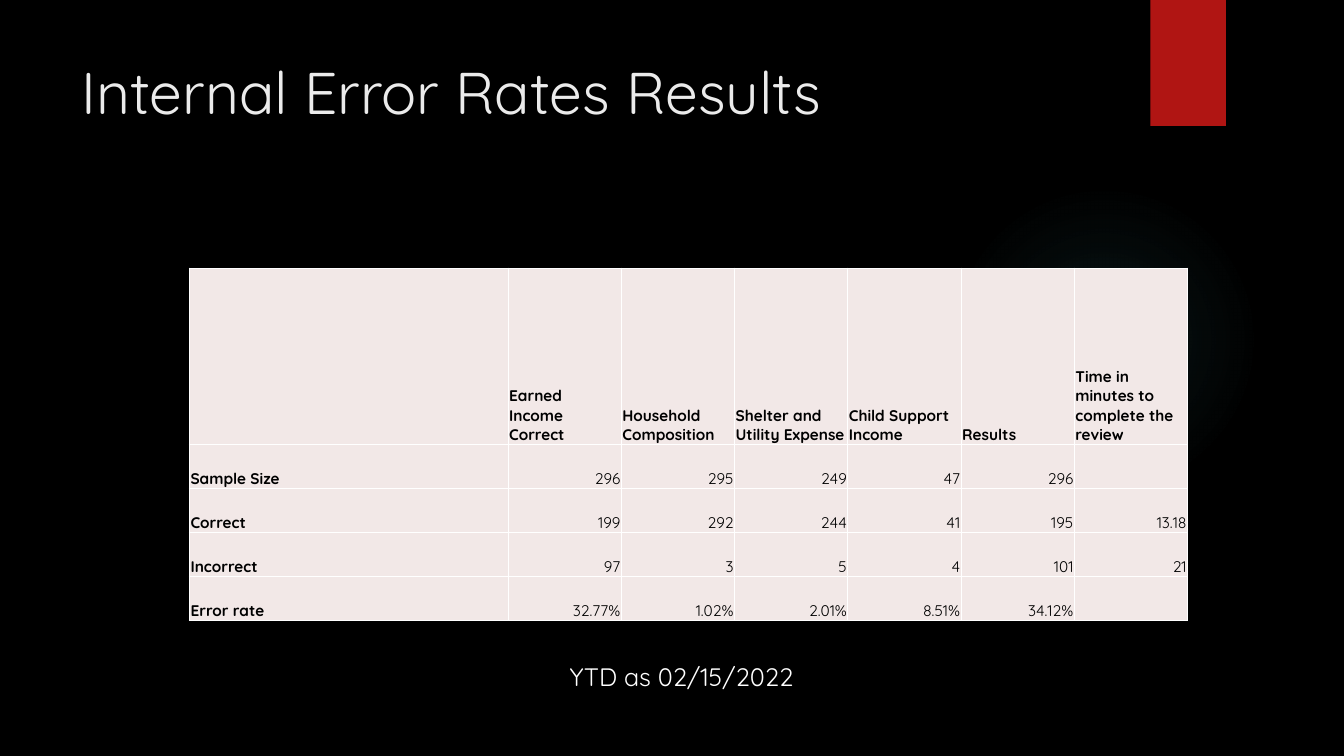
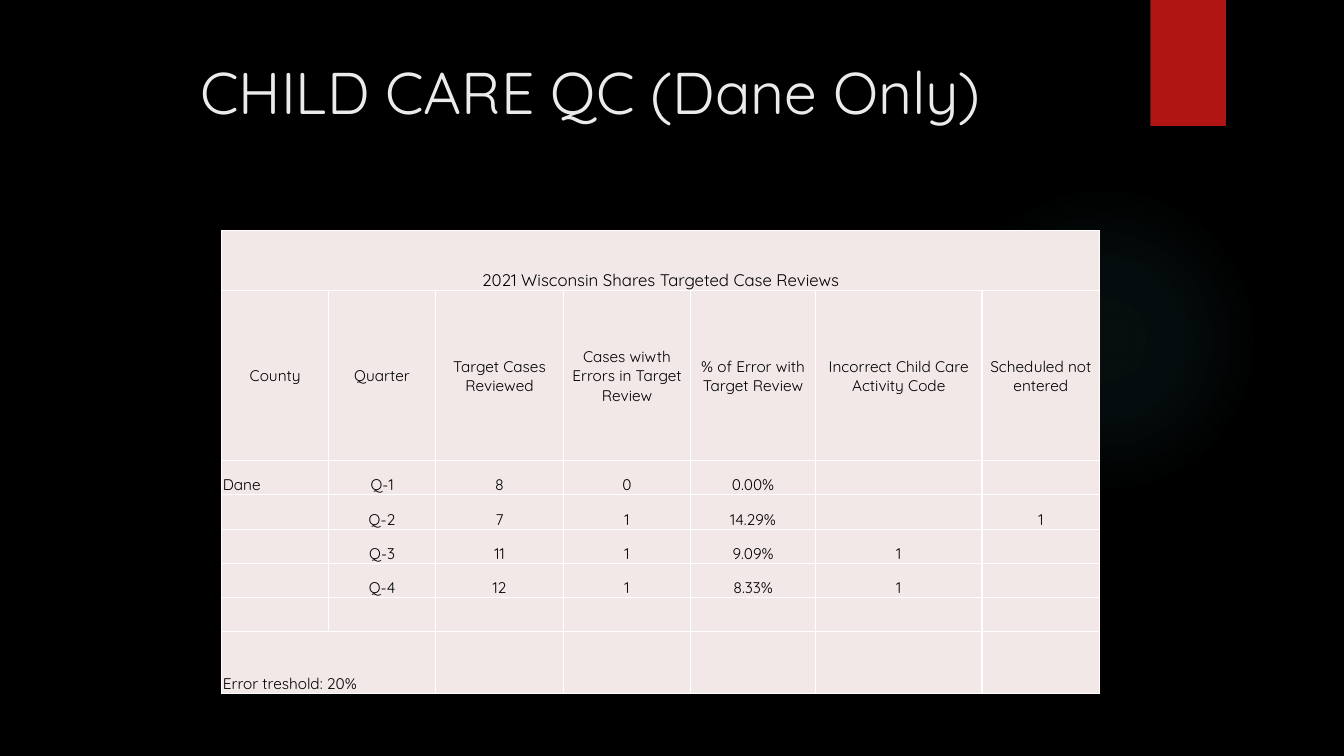
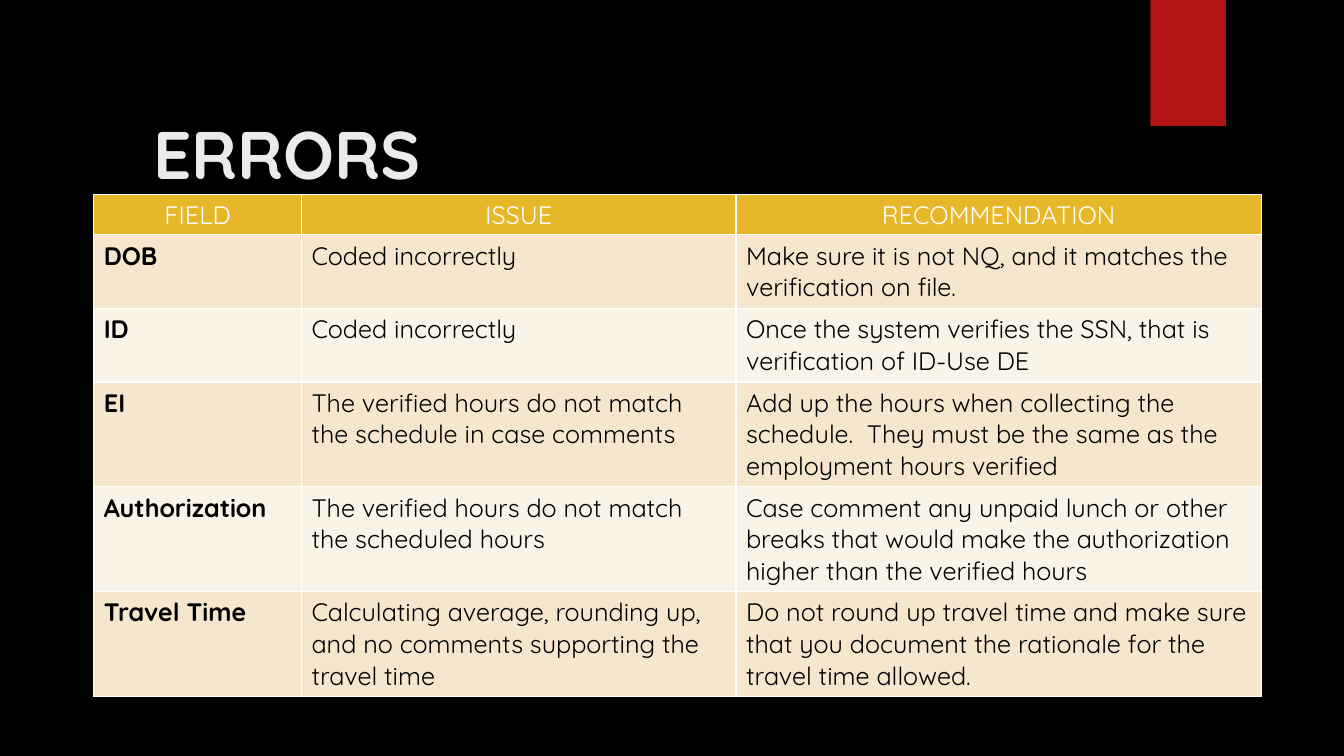
import pptx
import pptx.util
import pptx.oxml
import pptx.oxml.ns
import pptx.dml.color
import pptx.enum.shapes
import pptx.enum.text

Inches = pptx.util.Inches
Pt = pptx.util.Pt
RGBColor = pptx.dml.color.RGBColor
SHAPE = pptx.enum.shapes.MSO_SHAPE
ALIGN = pptx.enum.text.PP_ALIGN
ANCHOR = pptx.enum.text.MSO_ANCHOR

FONT = "Quicksand"
BLACK = RGBColor(0x00, 0x00, 0x00)
WHITE = RGBColor(0xFF, 0xFF, 0xFF)
PALE = RGBColor(0xEB, 0xEB, 0xEB)
RED = RGBColor(0xB0, 0x15, 0x13)
TEAL = RGBColor(0x50, 0xB9, 0xC1)
ROSE = RGBColor(0xF2, 0xE8, 0xE7)
GOLD = RGBColor(0xE6, 0xB7, 0x29)
SAND = RGBColor(0xF5, 0xE6, 0xCD)
CREAM = RGBColor(0xFA, 0xF3, 0xE8)

TIGHT = (0.01, 0.01, 0.01, 0)
ROOMY = (0.1, 0.05, 0.1, 0.05)

RATES = [
    ["", "Earned Income Correct", "Household Composition",
     "Shelter and Utility Expense", "Child Support Income", "Results",
     "Time in minutes to complete the review"],
    ["Sample Size", "296", "295", "249", "47", "296", ""],
    ["Correct", "199", "292", "244", "41", "195", "13.18"],
    ["Incorrect", "97", "3", "5", "4", "101", "21"],
    ["Error rate", "32.77%", "1.02%", "2.01%", "8.51%", "34.12%", ""],
]

CARE = [
    ["2021 Wisconsin Shares Targeted Case Reviews"],
    ["County", "Quarter", "Target Cases Reviewed",
     "Cases wiwth Errors in Target Review", "% of Error with Target Review",
     "Incorrect Child Care Activity Code", "Scheduled not entered"],
    ["Dane", "Q-1", "8", "0", "0.00%", "", ""],
    ["", "Q-2", "7", "1", "14.29%", "", "1"],
    ["", "Q-3", "11", "1", "9.09%", "1", ""],
    ["", "Q-4", "12", "1", "8.33%", "1", ""],
    [],
    ["Error treshold: 20%"],
]

ERRORS = [
    ["FIELD", "ISSUE", "RECOMMENDATION"],
    ["DOB", "Coded incorrectly",
     "Make sure it is not NQ, and it matches the verification on file."],
    ["ID", "Coded incorrectly",
     "Once the system verifies the SSN, that is verification of ID-Use DE"],
    ["EI", "The verified hours do not match the schedule in case comments",
     "Add up the hours when collecting the schedule.  They must be the same "
     "as the employment hours verified"],
    ["Authorization", "The verified hours do not match the scheduled hours",
     "Case comment any unpaid lunch or other breaks that would make the "
     "authorization higher than the verified hours"],
    ["Travel Time",
     "Calculating average, rounding up, and no comments supporting the "
     "travel time",
     "Do not round up travel time and make sure that you document the "
     "rationale for the travel time allowed."],
]


def put(frame, text, size=18, color=BLACK, bold=False, align=ALIGN.LEFT):
    """Write one formatted paragraph into a text frame."""
    frame.word_wrap = True
    para = frame.paragraphs[0]
    para.alignment = align
    run = para.add_run()
    run.text = text
    font = run.font
    font.name, font.size, font.bold = FONT, Pt(size), bold
    font.color.rgb = color


def label(slide, text, box, **form):
    shape = slide.shapes.add_textbox(*map(Inches, box))
    put(shape.text_frame, text, **form)


def title(slide, text, box=(0.71, 0.5, 10.29, 1.53), size=42, **form):
    label(slide, text, box, size=size, color=PALE, **form)


def block(slide, kind, box, color):
    shape = slide.shapes.add_shape(kind, *map(Inches, box))
    shape.shadow.inherit = False
    shape.fill.solid()
    shape.fill.fore_color.rgb = color
    shape.line.fill.background()
    return shape


def glow(shape, color, stops):
    """Swap the fill for a radial fade; stops are (place, opacity) percents."""
    marks = "".join(
        f'<a:gs pos="{place * 1000}"><a:srgbClr val="{color}">'
        f'<a:alpha val="{alpha * 1000}"/></a:srgbClr></a:gs>'
        for place, alpha in stops)
    fade = pptx.oxml.parse_xml(
        f'<a:gradFill {pptx.oxml.ns.nsdecls("a")} rotWithShape="1">'
        f'<a:gsLst>{marks}</a:gsLst><a:path path="circle">'
        '<a:fillToRect l="50000" t="50000" r="50000" b="50000"/>'
        '</a:path></a:gradFill>')
    props = shape.fill._xPr
    props.replace(props.find(pptx.oxml.ns.qn("a:solidFill")), fade)


def start(deck):
    """Add a slide with the shared glow and red tab."""
    slide = deck.slides.add_slide(deck.slide_layouts[6])
    disc = block(slide, SHAPE.OVAL, (9.41, 1.83, 3.08, 3.08), TEAL)
    glow(disc, TEAL, [(0, 7), (36, 6), (69, 0)])
    block(slide, SHAPE.RECTANGLE, (11.41, 0, 0.75, 1.25), RED)
    return slide


def edge(cell, color=WHITE, width=1):
    props = cell._tc.get_or_add_tcPr()
    for side in "LRTB":
        props.append(pptx.oxml.parse_xml(
            f'<a:ln{side} {pptx.oxml.ns.nsdecls("a")} w="{Pt(width)}">'
            f'<a:solidFill><a:srgbClr val="{color}"/></a:solidFill>'
            f'</a:ln{side}>'))


def grid(slide, left, top, cols, rows, data, look, pad):
    """Add a table; look(row, col) gives fill, anchor and text format."""
    frame = slide.shapes.add_table(
        len(rows), len(cols), Inches(left), Inches(top),
        Inches(sum(cols)), Inches(sum(rows)))
    table = frame.table
    table.horz_banding = False
    for col, width in zip(table.columns, cols):
        col.width = Inches(width)
    for row, height in zip(table.rows, rows):
        row.height = Inches(height)
    for r, line in enumerate(data):
        for c in range(len(cols)):
            cell = table.cell(r, c)
            fill, anchor, form = look(r, c)
            edge(cell)
            cell.fill.solid()
            cell.fill.fore_color.rgb = fill
            cell.vertical_anchor = anchor
            (cell.margin_left, cell.margin_top,
             cell.margin_right, cell.margin_bottom) = map(Inches, pad)
            if c < len(line) and line[c]:
                put(cell.text_frame, line[c], **form)
    return table


def rates(deck):
    def look(r, c):
        head = r == 0 or c == 0
        align = ALIGN.LEFT if head else ALIGN.RIGHT
        return ROSE, ANCHOR.BOTTOM, dict(size=11, bold=head, align=align)

    slide = start(deck)
    title(slide, "Internal Error Rates Results")
    cols = [3.16] + [(9.9 - 3.16) / 6] * 6
    rows = [1.75] + [1.75 / 4] * 4
    grid(slide, 1.88, 2.66, cols, rows, RATES, look, TIGHT)
    label(slide, "YTD as 02/15/2022", (5.55, 6.51, 3.82, 0.4), color=WHITE)


def care(deck):
    def look(r, c):
        side = c == 0 and r > 1
        return (ROSE, ANCHOR.MIDDLE if r == 1 else ANCHOR.BOTTOM,
                dict(size=11 if r else 12,
                     align=ALIGN.LEFT if side else ALIGN.CENTER))

    slide = start(deck)
    title(slide, "CHILD CARE QC (Dane Only)", align=ALIGN.CENTER)
    cols = [1.06, 1.06, 1.27, 1.26, 1.24, 1.65, 1.17]
    rows = [0.59, 1.69] + [0.34] * 5 + [0.61]
    table = grid(slide, 2.2, 2.29, cols, rows, CARE, look, TIGHT)
    table.cell(0, 0).merge(table.cell(0, 6))
    table.cell(7, 0).merge(table.cell(7, 1))


def errors(deck):
    def look(r, c):
        if r == 0:
            return GOLD, ANCHOR.TOP, dict(color=WHITE, align=ALIGN.CENTER)
        return SAND if r % 2 else CREAM, ANCHOR.TOP, dict(bold=c == 0)

    slide = start(deck)
    title(slide, "ERRORS", (1.42, 1.07, 10.5, 0.64), size=48, bold=True)
    cols = [2.06, 4.31, 5.21]
    rows = [0.4] + [0.73] * 2 + [1.04] * 3
    grid(slide, 0.93, 1.93, cols, rows, ERRORS, look, ROOMY)


def main():
    deck = pptx.Presentation()
    deck.slide_width, deck.slide_height = Inches(13.33), Inches(7.5)
    back = deck.slide_master.background.fill
    back.solid()
    back.fore_color.rgb = BLACK
    rates(deck)
    care(deck)
    errors(deck)
    deck.save("out.pptx")


if __name__ == "__main__":
    main()
